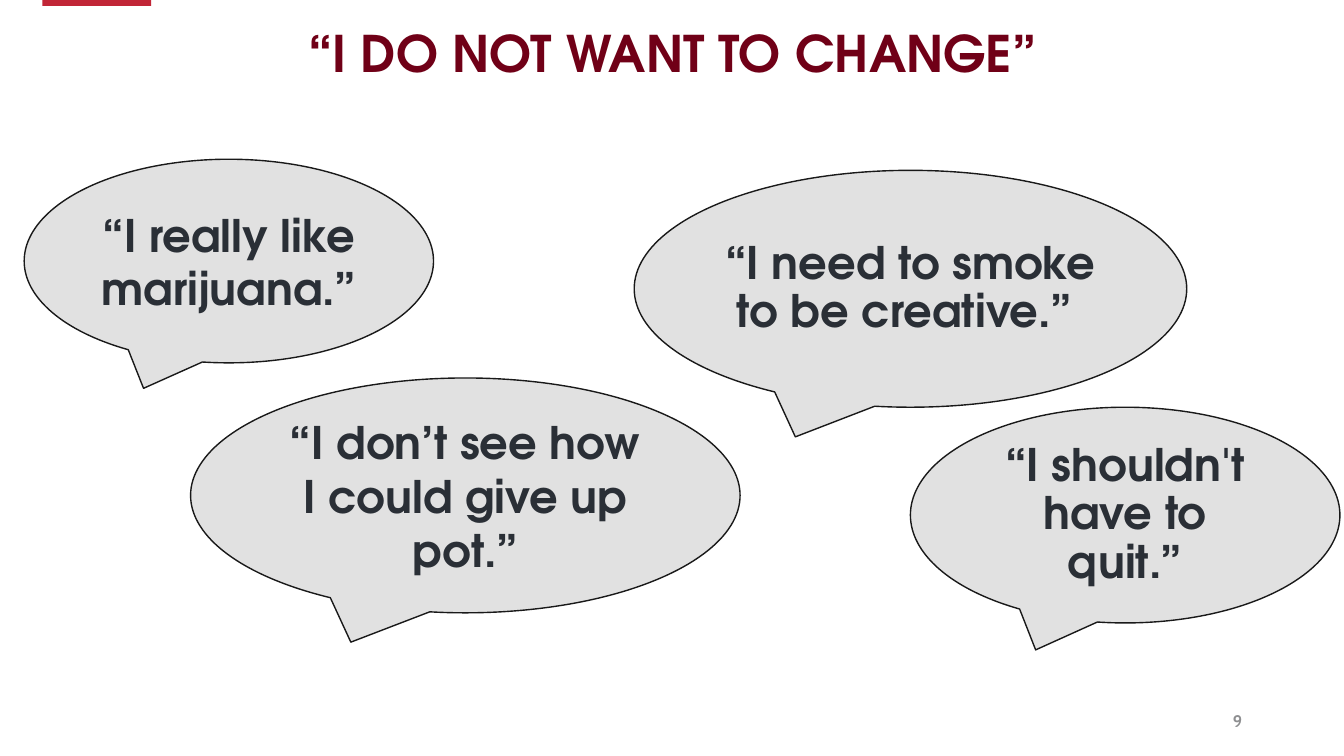
from pptx import Presentation
from pptx.dml.color import RGBColor
from pptx.enum.shapes import MSO_SHAPE
from pptx.enum.text import MSO_ANCHOR, PP_ALIGN
from pptx.util import Inches, Pt

COLORS = {
    "accent": "C12637",
    "title": "700017",
    "bubble": "E1E1E1",
    "outline": "191919",
    "quote": "2A2F36",
    "number": "8E8F91",
}
HEADING_FONT = "TeX Gyre Adventor"
NUMBER_FONT = "Cabin"

# Quote, box (left, top, width, height), line spacing
QUOTES = [
    ("“I need to smoke to be creative.” ", (6.29, 1.69, 5.48, 2.35), 0.9),
    ("“I really like marijuana.”", (0.24, 1.58, 4.06, 2.02), 1.0),
    ("“I don’t see how I could give up pot.”", (1.89, 3.75, 5.45, 2.33), 1.0),
    ("“I shouldn't have to quit.”", (9.03, 4.04, 4.26, 2.14), 0.9),
]


def color(name):
    return RGBColor.from_string(COLORS[name])


def inches(box):
    return [Inches(length) for length in box]


def write(shape, text, font, size, color_name, align, anchor, spacing=1.0):
    """Put one bold paragraph into the shape."""
    frame = shape.text_frame
    frame.word_wrap = True
    frame.vertical_anchor = anchor
    para = frame.paragraphs[0]
    para.alignment = align
    para.line_spacing = spacing
    span = para.add_run()
    span.text = text
    span.font.name = font
    span.font.size = Pt(size)
    span.font.bold = True
    span.font.color.rgb = color(color_name)


def add_filled_shape(slide, kind, box, fill):
    shape = slide.shapes.add_shape(kind, *inches(box))
    shape.shadow.inherit = False
    shape.fill.solid()
    shape.fill.fore_color.rgb = color(fill)
    shape.line.fill.background()
    return shape


def add_accent_bar(slide, box):
    add_filled_shape(slide, MSO_SHAPE.RECTANGLE, box, "accent")


def add_title(slide, box, text):
    title = slide.shapes.add_textbox(*inches(box))
    write(title, text, HEADING_FONT, 36, "title",
          PP_ALIGN.CENTER, MSO_ANCHOR.TOP, 0.9)


def add_speech_bubble(slide, box, text, spacing):
    bubble = add_filled_shape(slide, MSO_SHAPE.OVAL_CALLOUT, box, "bubble")
    bubble.line.color.rgb = color("outline")
    bubble.line.width = Pt(1)
    write(bubble, text, HEADING_FONT, 32, "quote",
          PP_ALIGN.CENTER, MSO_ANCHOR.MIDDLE, spacing)


def add_slide_number(slide, box, number):
    label = slide.shapes.add_textbox(*inches(box))
    write(label, number, NUMBER_FONT, 12, "number",
          PP_ALIGN.RIGHT, MSO_ANCHOR.MIDDLE)


def main():
    deck = Presentation()
    deck.slide_width, deck.slide_height = Inches(13.33), Inches(7.5)
    slide = deck.slides.add_slide(deck.slide_layouts[6])
    add_accent_bar(slide, (0.42, 0, 1.08, 0.06))
    add_title(slide, (0.92, 0.24, 11.5, 1.45), "“I DO NOT WANT TO CHANGE”")
    for text, box, spacing in QUOTES:
        add_speech_bubble(slide, box, text, spacing)
    add_slide_number(slide, (9.42, 6.95, 3, 0.4), "9")
    deck.save("out.pptx")


if __name__ == "__main__":
    main()
